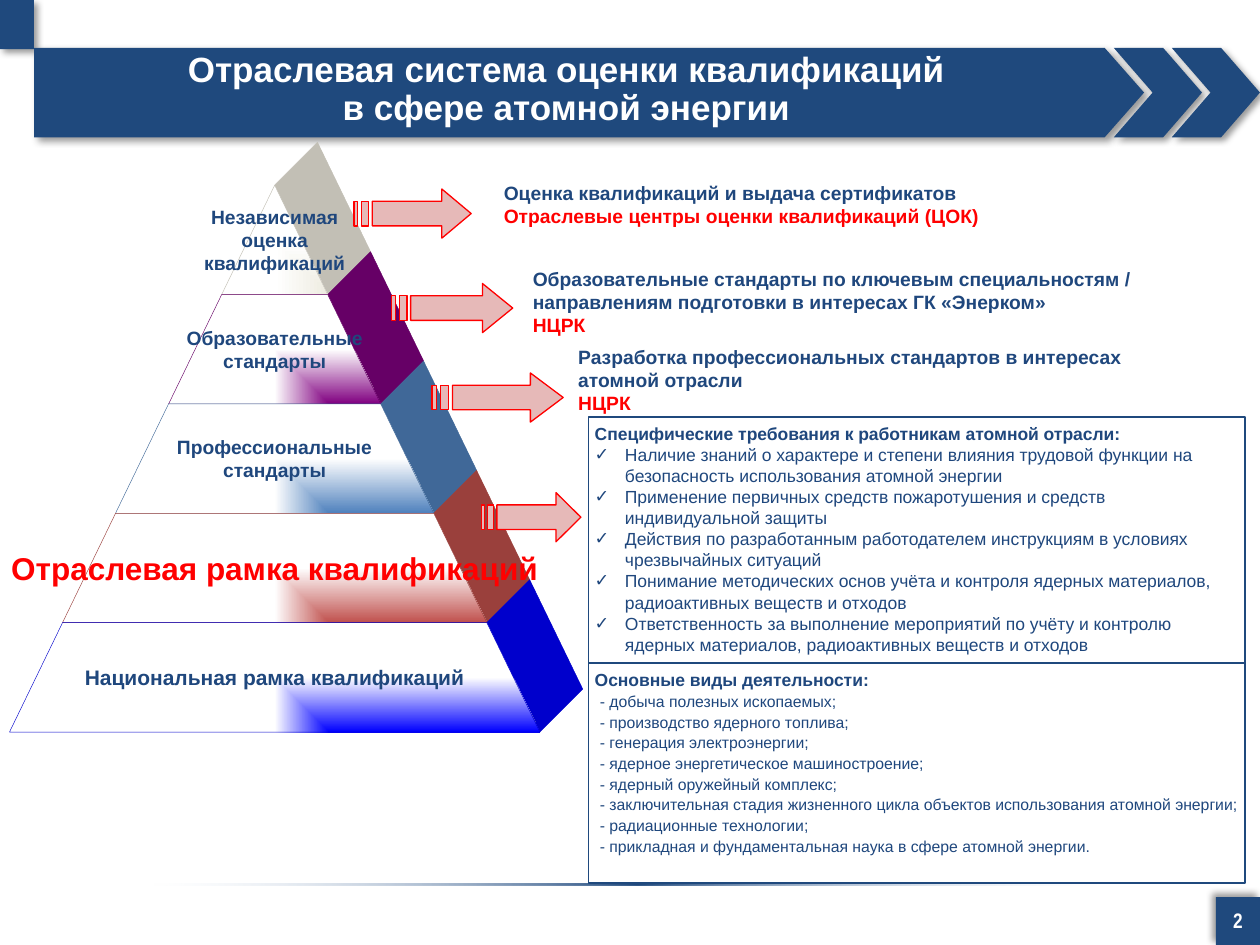
from dataclasses import dataclass

from lxml import etree
from pptx import Presentation
from pptx import util as u
from pptx.dml.color import RGBColor
from pptx.enum import shapes, text
from pptx.oxml.ns import qn

NAVY, INK, RED, WHITE = "1F497D", "1F477D", "FF0000", "FFFFFF"
A_NS = "http://schemas.openxmlformats.org/drawingml/2006/main"


@dataclass
class Run:
    text: str
    size: float
    color: str = INK
    bold: bool = True
    font: str = "Arial"


@dataclass
class Para:
    run: Run
    bullet: str = ""
    left: float = 0
    before: float = 0


@dataclass
class Layer:
    lines: list[str]
    front: str
    side: str
    size: float = 11
    color: str = INK


@dataclass
class Arrow:
    x: float
    y: float
    w: float


def rgb(value: str) -> RGBColor:
    return RGBColor.from_string(value)


def box(x: float, y: float, w: float, h: float) -> list:
    return [u.Inches(v) for v in (x, y, w, h)]


def add_run(p, run: Run) -> None:
    r = p.add_run()
    r.text = run.text
    r.font.name, r.font.size, r.font.bold = run.font, u.Pt(run.size), run.bold
    r.font.color.rgb = rgb(run.color)


def write(tf, paras: list[Para], align=text.PP_ALIGN.LEFT) -> None:
    for i, para in enumerate(paras):
        p = tf.add_paragraph() if i else tf.paragraphs[0]
        p.alignment = align
        p.space_before = u.Pt(para.before)
        pPr = p._p.get_or_add_pPr()
        pPr.set("marL", str(u.Inches(para.left)))
        if para.bullet:
            pPr.set("indent", str(-u.Inches(para.left)))
            etree.SubElement(pPr, qn("a:buFont"), typeface="Arial")
            etree.SubElement(pPr, qn("a:buChar"), char=para.bullet)
        add_run(p, para.run)


def set_gradient(sp, stops: list[tuple], direction: str) -> None:
    """Stops are (percent, colour, alpha percent)."""
    sp.fill.background()
    gs = "".join(
        f'<a:gs pos="{pos * 1000}"><a:srgbClr val="{color}">'
        f'<a:alpha val="{alpha * 1000}"/></a:srgbClr></a:gs>'
        for pos, color, alpha in stops)
    grad = etree.fromstring(
        f'<a:gradFill xmlns:a="{A_NS}" rotWithShape="1"><a:gsLst>{gs}</a:gsLst>'
        f'{direction}</a:gradFill>')
    spPr = sp.element.spPr
    spPr.replace(spPr.find(qn("a:noFill")), grad)


def add_block(s, kind, place: list, adj: float, angle: int | None = None):
    """Navy frame part; angle is the direction of its shadow."""
    sp = s.shapes.add_shape(kind, *place)
    sp.adjustments[0] = adj
    sp.shadow.inherit = False
    sp.fill.solid()
    sp.fill.fore_color.rgb = rgb(NAVY)
    sp.line.fill.background()
    if angle is not None:
        effects = sp.element.spPr.find(qn("a:effectLst"))
        effects.append(etree.fromstring(
            f'<a:outerShdw xmlns:a="{A_NS}" blurRad="{u.Pt(4)}" dist="{u.Pt(3)}" '
            f'dir="{angle * 60000}" algn="ctr" rotWithShape="0"><a:srgbClr val="000000">'
            '<a:alpha val="40000"/></a:srgbClr></a:outerShdw>'))
    return sp


def add_outline(s, contours: list[list[tuple]], fill: str, line: str, width: float):
    builder = None
    for contour in contours:
        pts = [(u.Inches(x), u.Inches(y)) for x, y in contour]
        if builder is None:
            builder = s.shapes.build_freeform(*pts[0], scale=1.0)
        else:
            builder.move_to(*pts[0])
        builder.add_line_segments(pts[1:], close=True)
    sp = builder.convert_to_shape()
    sp.shadow.inherit = False
    sp.fill.solid()
    sp.fill.fore_color.rgb = rgb(fill)
    sp.line.color.rgb = rgb(line)
    sp.line.width = u.Pt(width)
    return sp


def add_pyramid(s, layers: list[Layer]) -> None:
    cx, top, step, half, depth = 2.18, 1.47, 0.868, 0.421, 0.34

    def edges(i: int) -> tuple:
        return top + i * step, top + (i + 1) * step, i * half, (i + 1) * half

    for i, layer in enumerate(layers):
        y0, y1, w0, w1 = edges(i)
        side = [(cx + w0, y0), (cx + w0 + depth, y0 - depth),
                (cx + w1 + depth, y1 - depth), (cx + w1, y1)]
        add_outline(s, [side], layer.side, layer.side, 0.25)
    for i, layer in enumerate(layers):
        y0, y1, w0, w1 = edges(i)
        front = [(cx - w1, y1), (cx - w0, y0), (cx + w0, y0), (cx + w1, y1)]
        sp = add_outline(s, [front], WHITE, layer.side, 0.25)
        set_gradient(sp, [(0, layer.front, 100), (100, WHITE, 100)],
                     '<a:path path="rect"><a:fillToRect l="100000" t="100000"/></a:path>')
        tf = sp.text_frame
        tf.margin_left = tf.margin_right = tf.margin_top = tf.margin_bottom = 0
        tf.word_wrap = False
        tf.vertical_anchor = text.MSO_ANCHOR.MIDDLE
        write(tf, [Para(Run(t, layer.size, layer.color)) for t in layer.lines],
              text.PP_ALIGN.CENTER)


def add_arrow(s, a: Arrow) -> None:
    h = 0.39
    x = [a.x + a.w * k / 32 for k in range(33)]
    y0, y1, y2, y3 = (a.y + h * k / 4 for k in (0, 1, 3, 4))
    head = [(x[24], y0), (x[24], y1), (x[5], y1), (x[5], y2),
            (x[24], y2), (x[24], y3), (x[32], a.y + h / 2)]
    bars = [[(x[l], y1), (x[l], y2), (x[r], y2), (x[r], y1)] for l, r in ((2, 4), (0, 1))]
    add_outline(s, [head, *bars], "E6B9B8", RED, 0.75)


def add_note(s, place: list, heading: str, accent: str) -> None:
    tf = s.shapes.add_textbox(*place).text_frame
    tf.word_wrap = True
    write(tf, [Para(Run(heading, 11)), Para(Run(accent, 11, RED))])


def add_panel(s, place: list, paras: list[Para]) -> None:
    sp = s.shapes.add_shape(shapes.MSO_SHAPE.RECTANGLE, *place)
    sp.shadow.inherit = False
    sp.fill.background()
    sp.line.color.rgb = rgb(NAVY)
    sp.line.width = u.Pt(1)
    tf = sp.text_frame
    tf.margin_left = tf.margin_right = tf.margin_top = tf.margin_bottom = u.Inches(0.05)
    tf.word_wrap = True
    tf.vertical_anchor = text.MSO_ANCHOR.TOP
    write(tf, paras)


LAYERS = [
    Layer(["Независимая", "оценка", "квалификаций"], "EEECE1", "C2BFB5"),
    Layer(["Образовательные", "стандарты"], "800080", "660066"),
    Layer(["Профессиональные", "стандарты"], "4F81BD", "406898"),
    Layer(["Отраслевая рамка квалификаций"], "C0504D", "9A403C", 18, RED),
    Layer(["Национальная рамка квалификаций"], "0000FF", "0000CC", 12),
]
ARROWS = [Arrow(2.81, 1.5, 0.93), Arrow(3.11, 2.25, 0.96),
          Arrow(3.43, 2.96, 1.04), Arrow(3.82, 3.91, 0.79)]
NOTES = [
    (box(3.9, 1.39, 4.84, 0.47), "Оценка квалификаций и выдача сертификатов",
     "Отраслевые центры оценки квалификаций (ЦОК)"),
    (box(4.13, 2.07, 5.75, 0.71), "Образовательные стандарты по ключевым специальностям / "
     "направлениям подготовки в интересах ГК «Энерком»", "НЦРК"),
    (box(4.49, 2.69, 5.15, 0.62),
     "Разработка профессиональных стандартов в интересах атомной отрасли", "НЦРК"),
]
REQUIREMENTS = [
    "Наличие знаний о характере и степени влияния трудовой функции на безопасность использования атомной энергии",
    "Применение первичных средств пожаротушения и средств индивидуальной защиты",
    "Действия по разработанным работодателем инструкциям в условиях чрезвычайных ситуаций",
    "Понимание методических основ учёта и контроля ядерных материалов, радиоактивных веществ и отходов",
    "Ответственность за выполнение мероприятий по учёту и контролю ядерных материалов, радиоактивных веществ и отходов",
]
ACTIVITIES = [
    "добыча полезных ископаемых;", "производство ядерного топлива;", "генерация электроэнергии;",
    "ядерное энергетическое машиностроение;", "ядерный оружейный комплекс;",
    "заключительная стадия жизненного цикла объектов использования атомной энергии;",
    "радиационные технологии;", "прикладная и фундаментальная наука в сфере атомной энергии.",
]


def main() -> None:
    prs = Presentation()
    prs.slide_width, prs.slide_height = u.Inches(10), u.Inches(7.5)
    s = prs.slides.add_slide(prs.slide_layouts[5])

    # Frame: corners, header band, chevrons, footer line
    plate, chevron = shapes.MSO_SHAPE.PENTAGON, shapes.MSO_SHAPE.CHEVRON
    add_block(s, plate, box(9.65, 7.12, 0.35, 0.38), 0, 225)
    add_block(s, plate, box(0, 0, 0.27, 0.39), 0, 45)
    add_block(s, plate, box(0.27, 0.38, 8.81, 0.71), 0.44, 45)
    rule = add_block(s, plate, box(0.28, 7.01, 9.37, 0.02), 0)
    set_gradient(rule, [(10, "DCE6F2", 0), (51, NAVY, 100), (90, "DCE6F2", 0)],
                 '<a:lin ang="0" scaled="0"/>')
    for x in (8.84, 9.3):
        add_block(s, chevron, box(x, 0.38, 0.7, 0.71), 0.44, 45)

    # Title, brought in front of the band
    title = s.shapes.title
    title.left, title.top, title.width, title.height = box(0.28, 0.36, 8.43, 0.71)
    title.element.getparent().append(title.element)
    tf = title.text_frame
    tf.word_wrap = True
    tf.vertical_anchor = text.MSO_ANCHOR.MIDDLE
    p = tf.paragraphs[0]
    p.alignment, p.line_spacing = text.PP_ALIGN.CENTER, 0.9
    add_run(p, Run("Отраслевая система оценки квалификаций", 20, WHITE))
    p.add_line_break()
    add_run(p, Run("в сфере атомной энергии", 20, WHITE))

    # Pyramid with arrows and notes
    add_pyramid(s, LAYERS)
    for arrow in ARROWS:
        add_arrow(s, arrow)
    for note in NOTES:
        add_note(s, *note)

    # Panels
    add_panel(s, box(4.67, 3.31, 5.21, 1.95),
              [Para(Run("Специфические требования к работникам атомной отрасли:", 10))]
              + [Para(Run(t, 10, bold=False), "✓", 0.24) for t in REQUIREMENTS])
    add_panel(s, box(4.67, 5.26, 5.21, 1.75),
              [Para(Run("Основные виды деятельности:", 10))]
              + [Para(Run(f"- {t}", 9, bold=False), left=0.04, before=1) for t in ACTIVITIES])

    # Page number
    tf = s.shapes.add_textbox(*box(9.63, 7.14, 0.39, 0.33)).text_frame
    tf.word_wrap = True
    tf.vertical_anchor = text.MSO_ANCHOR.MIDDLE
    write(tf, [Para(Run("2", 12, WHITE, font="Arial Narrow"))], text.PP_ALIGN.CENTER)

    prs.save("out.pptx")


if __name__ == "__main__":
    main()
